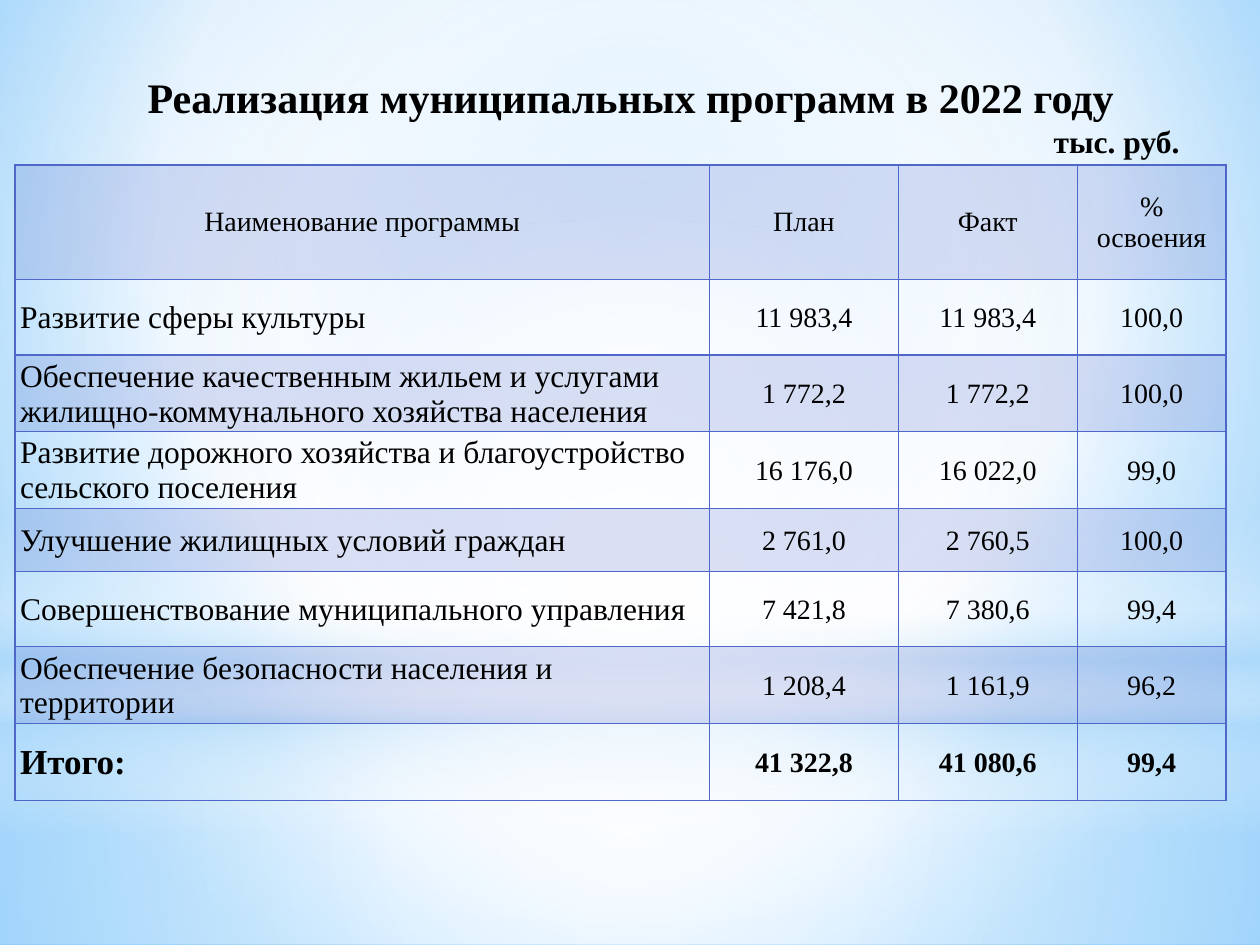
from lxml.etree import SubElement
from pptx import Presentation
from pptx.dml.color import RGBColor
from pptx.enum.shapes import MSO_SHAPE
from pptx.enum.text import MSO_ANCHOR, PP_ALIGN
from pptx.oxml.ns import qn
from pptx.util import Pt

FONT = "Times New Roman"
COLORS = {"text": "000000", "accent": "4E67C8", "white": "FFFFFF", "haze": "B4DCFA",
          "sky": "9ED5FF", "deep_sky": "5BB9FF"}
BAND_OPACITY = 20
COLUMN_WIDTHS = [396.8, 108, 102.2, 85]
ROW_HEIGHTS = [65.5, 43, 33, 33, 36, 43, 43, 44]
ROWS = [
    ["Наименование программы", "План", "Факт", "% освоения"],
    ["Развитие сферы культуры", "11 983,4", "11 983,4", "100,0"],
    ["Обеспечение качественным жильем и услугами жилищно-коммунального хозяйства населения",
     "1 772,2", "1 772,2", "100,0"],
    ["Развитие дорожного хозяйства и благоустройство сельского поселения",
     "16 176,0", "16 022,0", "99,0"],
    ["Улучшение жилищных условий граждан", "2 761,0", "2 760,5", "100,0"],
    ["Совершенствование муниципального управления", "7 421,8", "7 380,6", "99,4"],
    ["Обеспечение безопасности населения и территории", "1 208,4", "1 161,9", "96,2"],
    ["Итого:", "41 322,8", "41 080,6", "99,4"],
]


def add_color(parent, name, opacity=100):
    color = SubElement(parent, qn("a:srgbClr"), val=COLORS[name])
    if opacity < 100:
        SubElement(color, qn("a:alpha"), val=str(opacity * 1000))


def set_gradient(fill, owner, stops, center=None):
    """Stops are (position, color, opacity); without a center it runs downwards."""
    fill.gradient()
    gradient = next(owner.iter(qn("a:gradFill")))
    for child in list(gradient):
        gradient.remove(child)
    stop_list = SubElement(gradient, qn("a:gsLst"))
    for position, name, opacity in stops:
        stop = SubElement(stop_list, qn("a:gs"), pos=str(position * 1000))
        add_color(stop, name, opacity)
    if center:
        circle = SubElement(gradient, qn("a:path"), {"path": "circle"})
        sides = {side: str(value * 1000) for side, value in zip("ltrb", center)}
        SubElement(circle, qn("a:fillToRect"), sides)
    else:
        SubElement(gradient, qn("a:lin"), ang="5400000", scaled="0")


def add_glow(slide, kind, top, height, stops, center=(50, 50, 50, 50)):
    shape = slide.shapes.add_shape(kind, 0, Pt(top), Pt(720), Pt(height))
    shape.shadow.inherit = False
    shape.line.fill.background()
    set_gradient(shape.fill, shape.element, stops, center)


def add_backdrop(slide):
    set_gradient(slide.background.fill, slide.element,
                 [(0, "sky", 100), (60, "white", 100), (100, "deep_sky", 100)],
                 (20, 10, 20, 60))
    add_glow(slide, MSO_SHAPE.RECTANGLE, 402, 138,
             [(0, "white", 91), (37, "white", 76), (100, "haze", 79)])
    add_glow(slide, MSO_SHAPE.RECTANGLE, 0, 402,
             [(0, "white", 89), (48, "white", 62), (100, "haze", 79)])
    # Horizon band
    add_glow(slide, MSO_SHAPE.RECTANGLE, 296.6, 180,
             [(0, "white", 0), (29, "white", 30), (45, "haze", 40),
              (55, "white", 26), (65, "haze", 60), (100, "white", 0)], None)
    add_glow(slide, MSO_SHAPE.OVAL, 126, 402, [(0, "white", 100), (56, "white", 0)])


def style_paragraph(paragraph, text, size, bold, alignment):
    paragraph.text = text
    paragraph.alignment = alignment
    font = paragraph.font
    font.name, font.size, font.bold = FONT, Pt(size), bold
    font.color.rgb = RGBColor.from_string(COLORS["text"])


def add_title(slide, left, top, width, height):
    frame = slide.shapes.add_textbox(Pt(left), Pt(top), Pt(width), Pt(height)).text_frame
    frame.word_wrap = True
    frame.margin_top = Pt(7)
    style_paragraph(frame.paragraphs[0], "Реализация муниципальных программ в 2022 году",
                    24, True, PP_ALIGN.CENTER)
    style_paragraph(frame.add_paragraph(), "тыс. руб.", 18, True, PP_ALIGN.RIGHT)


def style_cell(cell, margins, banded):
    cell.vertical_anchor = MSO_ANCHOR.MIDDLE
    cell.margin_left, cell.margin_top, cell.margin_right, cell.margin_bottom = map(Pt, margins)
    properties = cell._tc.get_or_add_tcPr()
    for side in ("L", "R", "T", "B"):
        border = SubElement(properties, qn(f"a:ln{side}"), w=str(Pt(1)))
        add_color(SubElement(border, qn("a:solidFill")), "accent")
    if banded:
        add_color(SubElement(properties, qn("a:solidFill")), "accent", BAND_OPACITY)
    else:
        cell.fill.background()


def add_program_table(slide, left, top):
    table = slide.shapes.add_table(
        len(ROWS), len(COLUMN_WIDTHS), Pt(left), Pt(top),
        Pt(sum(COLUMN_WIDTHS)), Pt(sum(ROW_HEIGHTS))).table
    table.first_row = table.horz_banding = False
    for column, width in zip(table.columns, COLUMN_WIDTHS):
        column.width = Pt(width)
    for row_index, values in enumerate(ROWS):
        table.rows[row_index].height = Pt(ROW_HEIGHTS[row_index])
        header, total = row_index == 0, row_index == len(ROWS) - 1
        for column_index, text in enumerate(values):
            cell = table.cell(row_index, column_index)
            is_name = column_index == 0 and not header
            size = (20 if total else 18) if is_name else 16
            alignment = PP_ALIGN.LEFT if is_name else PP_ALIGN.CENTER
            style_paragraph(cell.text_frame.paragraphs[0], text, size, total, alignment)
            margins = (7.2, 3.6, 7.2, 3.6) if header else (2.9 if is_name else 0.7, 0.7, 0.7, 0)
            style_cell(cell, margins, banded=row_index % 2 == 0)


def main():
    presentation = Presentation()
    presentation.slide_width, presentation.slide_height = Pt(720), Pt(540)
    slide = presentation.slides.add_slide(presentation.slide_layouts[6])
    add_backdrop(slide)
    add_title(slide, 39.6, 33.8, 641.5, 33.8)
    add_program_table(slide, 8.6, 94.3)
    presentation.save("out.pptx")


if __name__ == "__main__":
    main()
